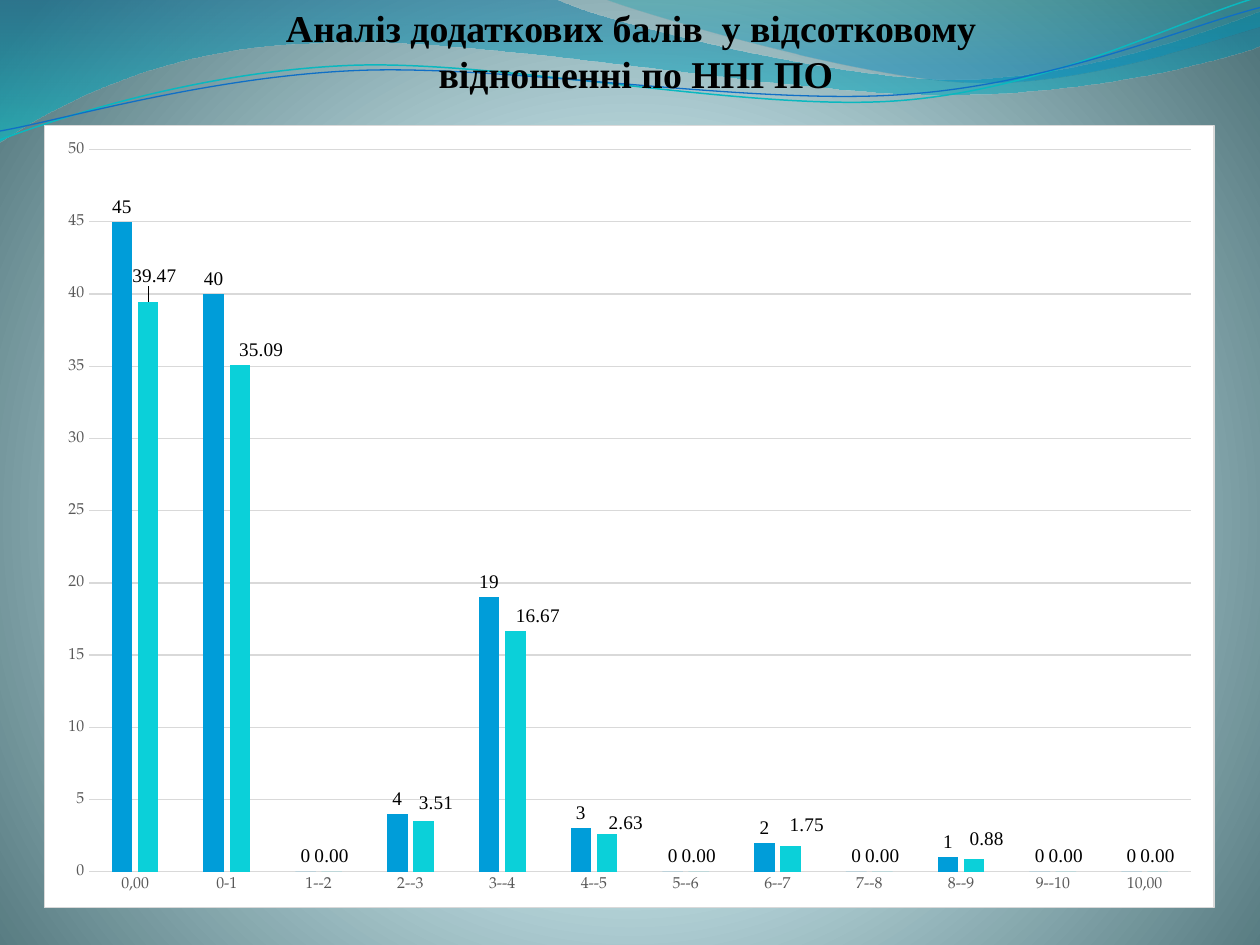
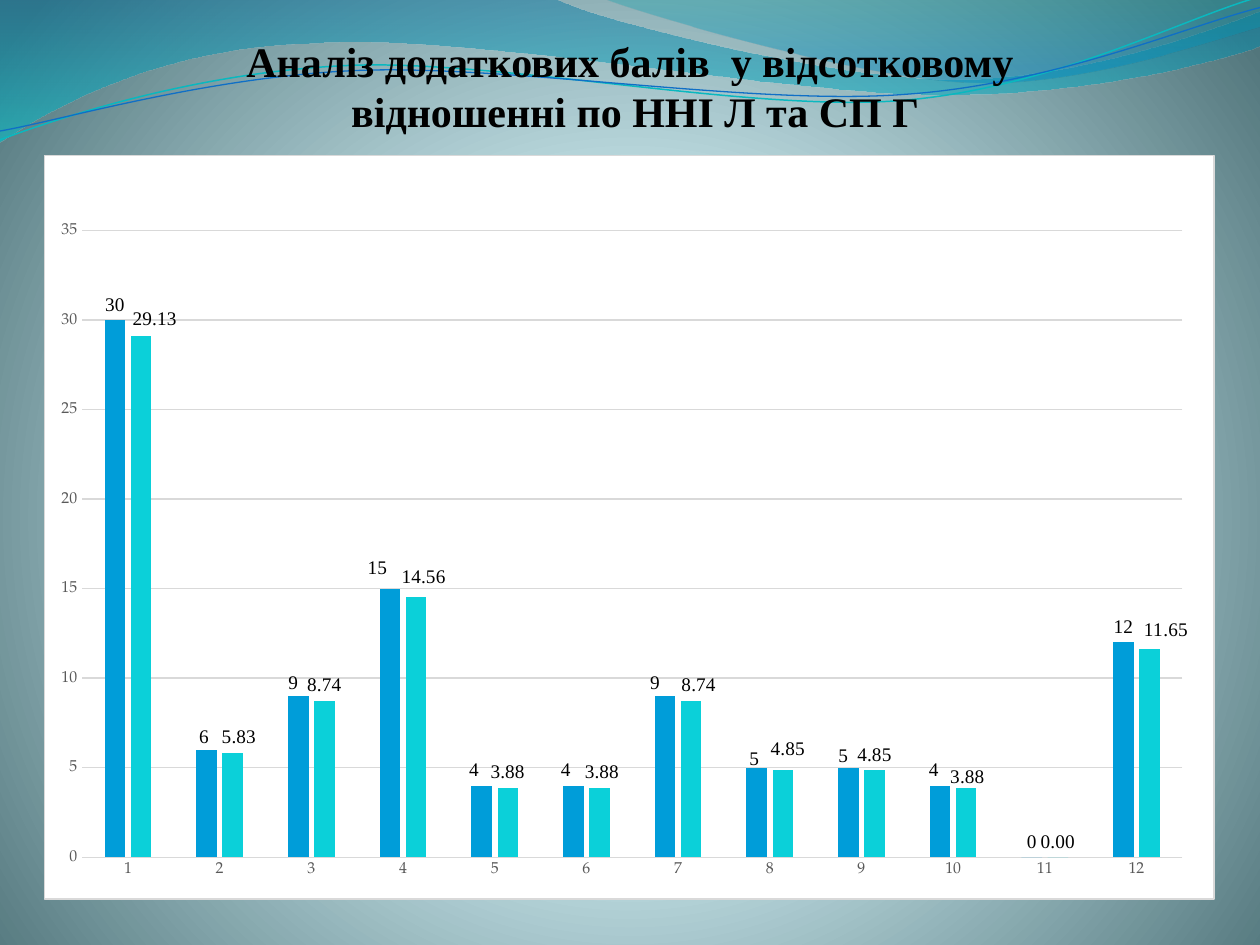
from copy import deepcopy

from lxml.etree import SubElement
from pptx import Presentation
from pptx.chart.data import CategoryChartData
from pptx.dml.color import RGBColor
from pptx.enum.chart import XL_CHART_TYPE, XL_LABEL_POSITION, XL_TICK_MARK
from pptx.enum.text import MSO_ANCHOR, MSO_AUTO_SIZE, PP_ALIGN
from pptx.oxml import parse_xml
from pptx.oxml.ns import nsdecls, qn
from pptx.util import Inches, Pt

BLACK = RGBColor(0x00, 0x00, 0x00)
AXIS_TEXT = RGBColor(0x59, 0x59, 0x59)
GRID = RGBColor(0xD9, 0xD9, 0xD9)
SERIES_COLORS = [RGBColor(0x00, 0x9D, 0xD9), RGBColor(0x0B, 0xD0, 0xD9)]
TEAL_LINE = RGBColor(0x0A, 0xB8, 0xBF)
BLUE_LINE = RGBColor(0x0F, 0x6F, 0xC6)
TITLE_FONT = "Times New Roman"
CHART_FONT = "TeX Gyre Pagella"
NUMBER_FORMATS = ["General", "0.00"]
CHART_2012 = "http://schemas.microsoft.com/office/drawing/2012/chart"

# Wave outlines in inches: a pair is a straight segment, six numbers a Bezier curve.
WAVE_BANDS = [
    ((0, 0),
     [(4.4, -0.01), (4.76, 0.17, 6.64, 0.63, 7.58, 0.63), (8.53, 0.63, 9.58, 0.26, 10, 0.09),
      (10.01, 0.36), (9.83, 0.44, 8.7, 0.76, 7.46, 0.75), (6.22, 0.75, 3.82, 0.28, 2.57, 0.34),
      (1.29, 0.36, 0.46, 0.83, -0.01, 1.13), (0, 0)],
     [(0, "0074A1", 45), (100, "00C6CF", 55)]),
    ((4.79, -0.01),
     [(5.09, 0.11, 6.82, 0.62, 7.69, 0.65), (8.56, 0.69, 9.61, 0.32, 10, 0.21), (10, 0),
      (4.79, -0.01)],
     [(0, "00A1A9", 30), (80, "008BBF", 45)]),
]
WAVE_LINES = [
    ((0, 1.11),
     [(0.48, 0.93, 1.58, 0.57, 2.77, 0.52), (3.95, 0.47, 5.93, 0.89, 7.13, 0.8),
      (8.33, 0.71, 9.38, 0.15, 9.98, -0.02)], TEAL_LINE, 0.85),
    ((0, 1.04),
     [(0.47, 0.96, 1.64, 0.61, 2.83, 0.56), (4.03, 0.51, 5.97, 0.84, 7.17, 0.75),
      (8.36, 0.67, 9.41, 0.21, 10, 0.06)], BLUE_LINE, 0.75),
]

# Label offsets are in inches from the usual place above the column, keyed by point.
SLIDES = [
    {
        "title": "Аналіз додаткових балів  у відсотковому\v відношенні по ННІ ПО",
        "title_box": (0.51, -0.03, 9, 0.79),
        "title_size": 21.6,
        "chart_box": (0.35, 0.99, 9.29, 6.22),
        "plot": (0.038, 0.031, 0.942, 0.923),
        "maximum": 50,
        "categories": ["0,00", "0-1", "1--2", "2--3", "3--4", "4--5",
                       "5--6", "6--7", "7--8", "8--9", "9--10", "10,00"],
        "values": [
            [45, 40, 0, 4, 19, 3, 0, 2, 0, 1, 0, 0],
            [39.47, 35.09, 0, 3.51, 16.67, 2.63, 0, 1.75, 0, 0.88, 0, 0],
        ],
        "label_offsets": [
            {},
            {0: (0.05, -0.08), 1: (0.17, 0), 3: (0.1, -0.02), 4: (0.18, 0),
             5: (0.15, 0.04), 7: (0.13, -0.05), 9: (0.1, -0.04)},
        ],
    },
    {
        "title": "Аналіз додаткових балів  у відсотковому\v відношенні по ННІ Л та СП Г",
        "title_box": (0.5, 0.21, 9, 0.87),
        "title_size": 24,
        "chart_box": (0.35, 1.23, 9.29, 5.91),
        "plot": (0.032, 0.101, 0.941, 0.843),
        "maximum": 35,
        "categories": [str(number) for number in range(1, 13)],
        "values": [
            [30, 6, 9, 15, 4, 4, 9, 5, 5, 4, 0, 12],
            [29.13, 5.83, 8.74, 14.56, 3.88, 3.88, 8.74, 4.85, 4.85, 3.88, 0, 11.65],
        ],
        "label_offsets": [
            {1: (-0.02, 0.02), 2: (-0.04, 0.02), 3: (-0.1, -0.04), 4: (-0.06, 0), 5: (-0.06, 0),
             6: (-0.08, 0.02), 7: (-0.02, 0.05), 8: (-0.04, 0.03), 9: (-0.05, 0)},
            {0: (0.11, -0.01), 1: (0.05, 0), 3: (0.06, -0.03), 5: (0.02, 0),
             6: (0.06, 0), 7: (0.04, -0.05), 9: (0.01, 0.04), 11: (0.13, -0.03)},
        ],
    },
]


def set_gradient(fill, element, stops, direction):
    """Give the element a gradient of (position, colour, opacity) stops, all in percent."""
    fill.gradient()
    gradient = next(element.iter(qn("a:gradFill")))
    for child in list(gradient):
        gradient.remove(child)
    stop_list = SubElement(gradient, qn("a:gsLst"))
    for position, color, opacity in stops:
        stop = SubElement(stop_list, qn("a:gs"), pos=str(position * 1000))
        color_element = SubElement(stop, qn("a:srgbClr"), val=color)
        if opacity < 100:
            SubElement(color_element, qn("a:alpha"), val=str(opacity * 1000))
    gradient.append(parse_xml(direction))


def add_wave(slide, start, segments, close):
    """Build the outline through its end points, then bend the curved segments."""
    ends = [(Inches(segment[-2]), Inches(segment[-1])) for segment in segments]
    builder = slide.shapes.build_freeform(Inches(start[0]), Inches(start[1]))
    builder.add_line_segments(ends, close=close)
    shape = builder.convert_to_shape()
    shape.shadow.inherit = False
    straight_lines = list(shape._element.iter(qn("a:lnTo")))
    for straight_line, segment in zip(straight_lines, segments):
        if len(segment) == 6:
            straight_line.tag = qn("a:cubicBezTo")
            end_point = straight_line[0]
            for x, y in (segment[:2], segment[2:4]):
                control_point = deepcopy(end_point)
                control_point.set("x", str(Inches(x) - shape.left))
                control_point.set("y", str(Inches(y) - shape.top))
                end_point.addprevious(control_point)
    return shape


presentation = Presentation()
presentation.slide_width = Inches(10)
presentation.slide_height = Inches(7.5)
layout = presentation.slide_layouts.get_by_name("Title Only")
slides = [presentation.slides.add_slide(layout) for _ in SLIDES]

# Shared background and waves live on the layout.
set_gradient(
    layout.background.fill, layout._element,
    [(0, "DEFBFF", 100), (25, "DDFAFF", 100), (100, "52767C", 100)],
    f'<a:path {nsdecls("a")} path="circle">'
    '<a:fillToRect l="10000" t="110000" r="10000" b="100000"/></a:path>')
waves = []
for start, segments, stops in WAVE_BANDS:
    band = add_wave(slides[0], start, segments, True)
    set_gradient(band.fill, band._element, stops,
                 f'<a:lin {nsdecls("a")} ang="5400000" scaled="1"/>')
    band.line.fill.background()
    waves.append(band)
for start, segments, color, width in WAVE_LINES:
    wave_line = add_wave(slides[0], start, segments, False)
    wave_line.fill.background()
    wave_line.line.color.rgb = color
    wave_line.line.width = Pt(width)
    waves.append(wave_line)
for wave in waves:
    layout.shapes._spTree.append(wave._element)

for slide, content in zip(slides, SLIDES):
    title = slide.shapes.title
    title.left, title.top, title.width, title.height = map(Inches, content["title_box"])
    text_frame = title.text_frame
    text_frame.text = content["title"]
    text_frame.word_wrap = True
    text_frame.auto_size = MSO_AUTO_SIZE.NONE
    text_frame.vertical_anchor = MSO_ANCHOR.BOTTOM
    text_frame.margin_left = text_frame.margin_right = text_frame.margin_bottom = 0
    text_frame.margin_top = Inches(0.05)
    paragraph = text_frame.paragraphs[0]
    paragraph.alignment = PP_ALIGN.CENTER
    for run in paragraph.runs:
        run.font.name = TITLE_FONT
        run.font.size = Pt(content["title_size"])
        run.font.bold = True
        run.font.color.rgb = BLACK
    for line_break in paragraph._p.findall(qn("a:br")):
        line_break.append(deepcopy(paragraph.runs[0]._r.rPr))

    chart_data = CategoryChartData()
    chart_data.categories = content["categories"]
    for number, (values, number_format) in enumerate(zip(content["values"], NUMBER_FORMATS), 1):
        chart_data.add_series(f"Series {number}", values, number_format)
    chart_box = content["chart_box"]
    chart = slide.shapes.add_chart(
        XL_CHART_TYPE.COLUMN_CLUSTERED, *map(Inches, chart_box), chart_data).chart
    chart.has_legend = False
    chart.has_title = False
    chart.font.name = CHART_FONT
    chart.font.size = Pt(10)
    chart.font.color.rgb = BLACK

    chart_space = chart._chartSpace
    chart_space.find(qn("c:chart")).addnext(parse_xml(
        f'<c:spPr {nsdecls("c", "a")}><a:solidFill><a:srgbClr val="FFFFFF"/></a:solidFill>'
        f'<a:ln w="9525"><a:solidFill><a:srgbClr val="{GRID}"/></a:solidFill></a:ln></c:spPr>'))
    plot_area = next(chart_space.iter(qn("c:plotArea")))
    for old_layout in plot_area.findall(qn("c:layout")):
        plot_area.remove(old_layout)
    x, y, width, height = content["plot"]
    plot_area.insert(0, parse_xml(
        f'<c:layout {nsdecls("c")}><c:manualLayout><c:layoutTarget val="inner"/>'
        f'<c:xMode val="edge"/><c:yMode val="edge"/><c:x val="{x}"/><c:y val="{y}"/>'
        f'<c:w val="{width}"/><c:h val="{height}"/></c:manualLayout></c:layout>'))

    for axis in (chart.category_axis, chart.value_axis):
        axis.major_tick_mark = axis.minor_tick_mark = XL_TICK_MARK.NONE
        axis.tick_labels.font.name = CHART_FONT
        axis.tick_labels.font.size = Pt(9)
        axis.tick_labels.font.color.rgb = AXIS_TEXT
    value_axis = chart.value_axis
    value_axis.minimum_scale = 0
    value_axis.maximum_scale = content["maximum"]
    value_axis.major_unit = 5
    value_axis.format.line.fill.background()
    for line in (chart.category_axis.format.line, value_axis.major_gridlines.format.line):
        line.color.rgb = GRID
        line.width = Pt(0.75)

    plot = chart.plots[0]
    plot.gap_width = 219
    plot.overlap = -27
    plot.vary_by_categories = False
    for series, color, number_format, offsets in zip(
            plot.series, SERIES_COLORS, NUMBER_FORMATS, content["label_offsets"]):
        series.format.fill.solid()
        series.format.fill.fore_color.rgb = color
        labels = series.data_labels
        labels.show_value = True
        labels.number_format = number_format
        labels.number_format_is_linked = False
        moved_labels = [series.points[index].data_label for index in offsets]
        for label in [labels, *moved_labels]:
            label.position = XL_LABEL_POSITION.OUTSIDE_END
            label.font.name = TITLE_FONT
            label.font.size = Pt(11)
            label.font.color.rgb = BLACK
        for label, (right, down) in zip(moved_labels, offsets.values()):
            index_element = label._get_or_add_dLbl().find(qn("c:idx"))
            index_element.addnext(parse_xml(
                f'<c:numFmt {nsdecls("c")} formatCode="{number_format}" sourceLinked="0"/>'))
            index_element.addnext(parse_xml(
                f'<c:layout {nsdecls("c")}><c:manualLayout>'
                f'<c:x val="{right / chart_box[2]:.4f}"/><c:y val="{down / chart_box[3]:.4f}"/>'
                '</c:manualLayout></c:layout>'))
        # Moved labels have no leader lines.
        labels._element.append(parse_xml(
            f'<c:extLst {nsdecls("c")}><c:ext uri="{{CE6537A1-D6FC-4f65-9D91-7224C49458BB}}" '
            f'xmlns:c15="{CHART_2012}"><c15:showLeaderLines val="0"/></c:ext></c:extLst>'))

presentation.save("out.pptx")
